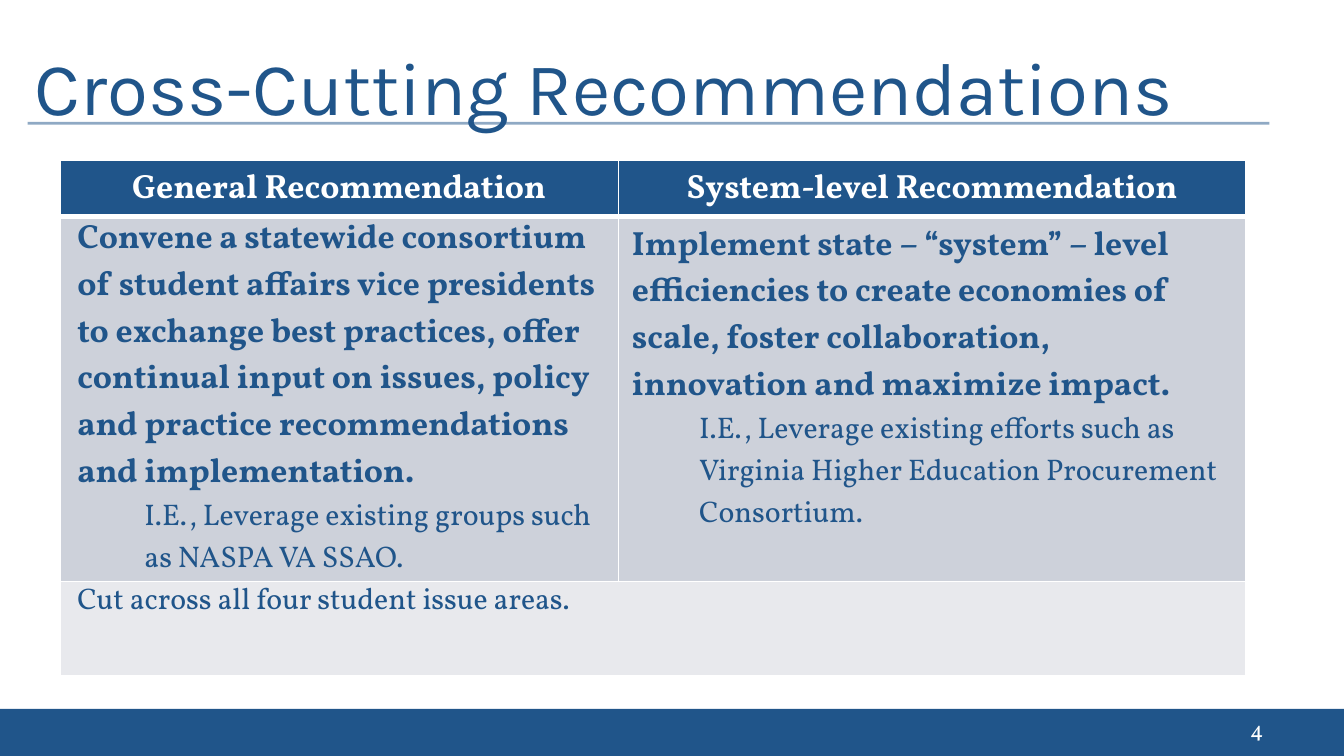
from pptx import Presentation
from pptx.dml.color import RGBColor
from pptx.enum.shapes import MSO_CONNECTOR, MSO_SHAPE
from pptx.enum.text import MSO_ANCHOR, PP_ALIGN
from pptx.oxml.ns import qn
from pptx.util import Cm, Pt
from lxml.etree import SubElement

NAVY, WHITE = "20558A", "FFFFFF"
HEADER_FILL, BODY_FILL, FOOTER_FILL = NAVY, "CDD1DA", "E8E9ED"

HEADINGS = ["General Recommendation", "System-level Recommendation"]
RECOMMENDATIONS = [
    ("Convene a statewide consortium of student affairs vice presidents to exchange "
     "best practices, offer continual input on issues, policy and practice "
     "recommendations and implementation.",
     "I.E., Leverage existing groups such as NASPA VA SSAO."),
    ("Implement state – “system” – level efficiencies to create economies of scale, "
     "foster collaboration, innovation and maximize impact.",
     "I.E., Leverage existing efforts such as Virginia Higher Education "
     "Procurement Consortium."),
]
SCOPE = "Cut across all four student issue areas."


def rgb(code):
    return RGBColor.from_string(code)


def style(paragraph, size, color, bold=False, name="Vollkorn", align=PP_ALIGN.LEFT):
    paragraph.alignment = align
    font = paragraph.font
    font.size, font.bold, font.name = Pt(size), bold, name
    font.color.rgb = rgb(color)


def add_title(slide, text):
    title = slide.shapes.title
    title.left, title.top, title.width, title.height = Cm(0.4), Cm(0.56), Cm(23.04), Cm(2.03)
    title.text_frame.text = text
    title.text_frame.vertical_anchor = MSO_ANCHOR.BOTTOM
    style(title.text_frame.paragraphs[0], 40, NAVY, name="Karla")


def add_title_rule(slide):
    rule = slide.shapes.add_connector(
        MSO_CONNECTOR.STRAIGHT, Cm(0.52), Cm(2.33), Cm(23.99), Cm(2.33))
    rule.line.color.rgb = rgb(NAVY)
    rule.line.width = Pt(1.5)
    color = rule.line._ln.find(".//" + qn("a:srgbClr"))
    SubElement(color, qn("a:alpha"), val="50000")
    SubElement(rule._element.spPr, qn("a:effectLst"))


def add_footer(slide, page):
    band = slide.shapes.add_shape(
        MSO_SHAPE.RECTANGLE, Cm(-0.02), Cm(13.4), Cm(25.43), Cm(0.89))
    band.shadow.inherit = False
    band.fill.solid()
    band.fill.fore_color.rgb = rgb(NAVY)
    band.line.fill.background()

    number = slide.shapes.add_textbox(Cm(18.21), Cm(13.39), Cm(5.92), Cm(0.76)).text_frame
    number.word_wrap = True
    number.vertical_anchor = MSO_ANCHOR.MIDDLE
    number.text = page
    style(number.paragraphs[0], 12, WHITE, align=PP_ALIGN.RIGHT)


def format_cell(cell, fill, top=1, bottom=1):
    """Give a cell white borders, of the given points above and below, and a fill."""
    properties = cell._tc.get_or_add_tcPr()
    for side, points in (("L", 1), ("R", 1), ("T", top), ("B", bottom)):
        border = SubElement(properties, qn(f"a:ln{side}"), w=str(Pt(points)))
        SubElement(SubElement(border, qn("a:solidFill")), qn("a:srgbClr"), val=WHITE)
    cell.fill.solid()
    cell.fill.fore_color.rgb = rgb(fill)


def set_wide_margins(cell):
    cell.margin_left = cell.margin_right = Cm(0.33)
    cell.margin_top = cell.margin_bottom = 0


def fill_recommendation(cell, advice, example):
    cell.text = advice
    style(cell.text_frame.paragraphs[0], 18, NAVY, bold=True)
    detail = cell.text_frame.add_paragraph()
    detail.text = example
    detail.level = 1
    properties = detail._p.get_or_add_pPr()
    properties.set("marL", str(Cm(1.27)))
    properties.set("indent", "0")
    style(detail, 16, NAVY)


def add_recommendations(slide):
    widths, heights = (10.56, 11.85), (1.07, 6.9, 1.78)
    table = slide.shapes.add_table(
        len(heights), len(widths), Cm(1.13), Cm(3.02),
        Cm(sum(widths)), Cm(sum(heights))).table
    for column, width in zip(table.columns, widths):
        column.width = Cm(width)
    for row, height in zip(table.rows, heights):
        row.height = Cm(height)

    for index, (heading, recommendation) in enumerate(zip(HEADINGS, RECOMMENDATIONS)):
        header, body, footer = (table.cell(row, index) for row in range(len(heights)))
        format_cell(header, HEADER_FILL, bottom=3)
        format_cell(body, BODY_FILL, top=3)
        format_cell(footer, FOOTER_FILL)
        header.text = heading
        style(header.text_frame.paragraphs[0], 18, WHITE, bold=True, align=PP_ALIGN.CENTER)
        fill_recommendation(body, *recommendation)

    scope = table.cell(2, 0)
    scope.merge(table.cell(2, 1))
    scope.text = SCOPE
    style(scope.text_frame.paragraphs[0], 16, NAVY)
    for cell in (table.cell(1, 0), scope):
        set_wide_margins(cell)


def main():
    deck = Presentation()
    deck.slide_width, deck.slide_height = Cm(25.4), Cm(14.29)
    slide = deck.slides.add_slide(deck.slide_layouts[5])
    add_footer(slide, "4")
    add_title_rule(slide)
    add_title(slide, "Cross-Cutting Recommendations")
    add_recommendations(slide)
    deck.save("out.pptx")


if __name__ == "__main__":
    main()
